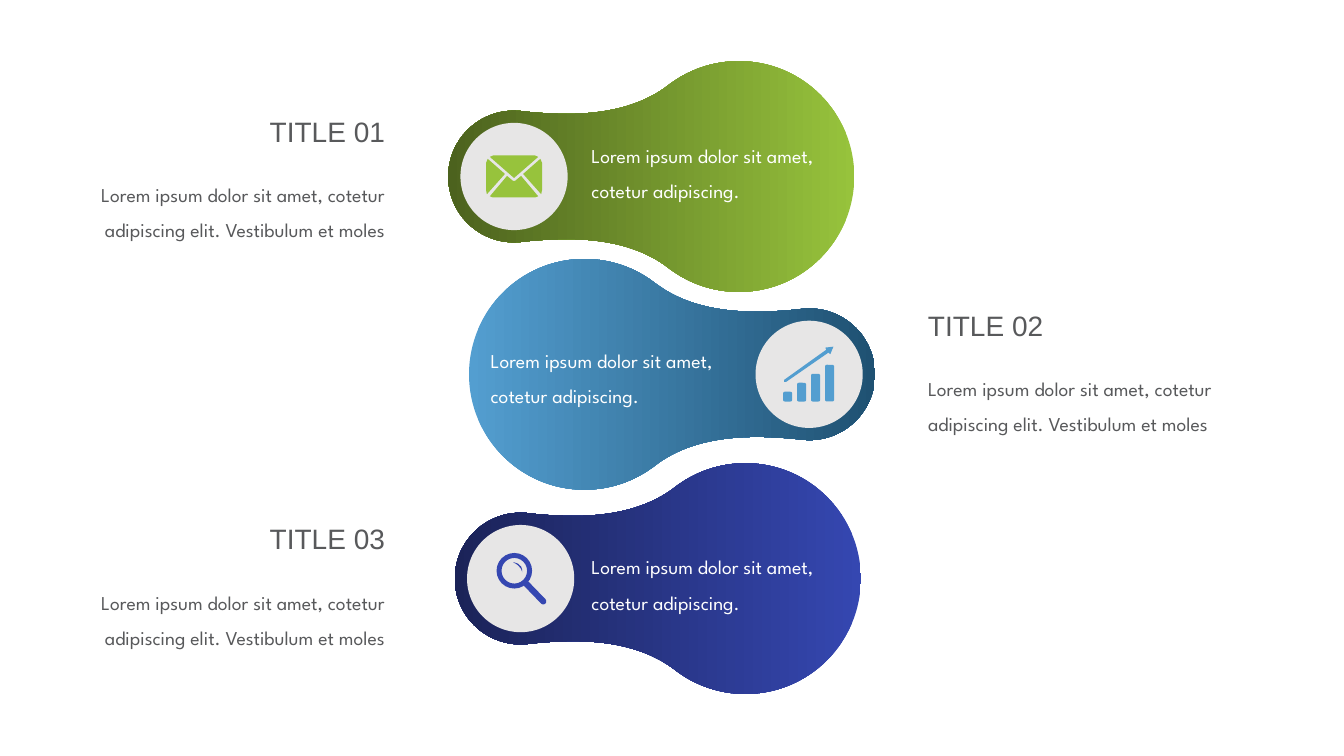
"""Build a slide of three gradient lobes with icons, captions and side texts."""
from dataclasses import dataclass
from typing import Callable

from lxml.etree import SubElement
from pptx import Presentation
from pptx.dml.color import RGBColor
from pptx.enum.shapes import MSO_SHAPE as Preset
from pptx.enum.text import MSO_ANCHOR as Anchor, PP_ALIGN as Align
from pptx.oxml.ns import qn
from pptx.shapes.autoshape import Shape
from pptx.shapes.shapetree import SlideShapes
from pptx.util import Pt

Point = tuple[float, float]

COLORS = {
    "green": "97C33C", "dark green": "4C621E",
    "blue": "539ED0", "dark blue": "1F5172",
    "indigo": "3547B1", "dark indigo": "1B2358",
    "disc": "E7E6E6", "white": "FFFFFF", "gray": "58595B",
}
CAPTION = "Lorem ipsum dolor sit amet, cotetur adipiscing."
DETAIL = "Lorem ipsum dolor sit amet, cotetur adipiscing elit. Vestibulum et moles"
BODY_FONT, TITLE_FONT = "League Spartan", "Arial"
TAIL_OFFSET, DISC_SIZE = 160.6, 76.6
CAPTION_WIDTH, TITLE_WIDTH, DETAIL_WIDTH = 194.4, 194.4, 246.2
DETAIL_DROP = 50.7
UPPER_LOBE = [
    (-82.4, 0), (-82.4, -45.5), (-45.5, -82.4), (0, -82.4),
    (19, -82.4), (36.4, -76), (50.4, -65.2),
    (81.4, -41.4), (124.6, -43.6), (152.6, -46.4),
    (155.2, -46.8), (157.9, -47), (160.6, -47),
    (186.6, -47), (207.6, -26), (207.6, 0),
]


@dataclass(frozen=True)
class Panel:
    title: str
    hue: str
    head: Point
    facing: int
    caption: Point
    title_top: float
    side_edge: float
    draw_icon: Callable[[SlideShapes, Point, str], None]


def color(name: str) -> RGBColor:
    return RGBColor.from_string(COLORS[name])


def clean(shape: Shape, fill: str) -> Shape:
    shape.shadow.inherit = False
    shape.line.fill.background()
    shape.fill.solid()
    shape.fill.fore_color.rgb = color(fill)
    return shape


def add_preset(shapes: SlideShapes, preset: Preset, center: Point,
               width: float, height: float, fill: str) -> Shape:
    x, y = center
    shape = shapes.add_shape(preset, Pt(x - width / 2), Pt(y - height / 2),
                             Pt(width), Pt(height))
    return clean(shape, fill)


def add_outline(shapes: SlideShapes, origin: Point, contours: list[list[Point]],
                fill: str) -> Shape:
    placed = [[(Pt(origin[0] + x), Pt(origin[1] + y)) for x, y in contour]
              for contour in contours]
    builder = shapes.build_freeform(*placed[0][0])
    builder.add_line_segments(placed[0][1:])
    for contour in placed[1:]:
        builder.move_to(*contour[0])
        builder.add_line_segments(contour[1:])
    return clean(builder.convert_to_shape(), fill)


def add_curve(shapes: SlideShapes, origin: Point, controls: list[Point],
              fill: str) -> Shape:
    shape = add_outline(shapes, origin, [controls], fill)
    segments = list(shape._element.iter(qn("a:lnTo")))
    outline = segments[0].getparent()
    for i in range(0, len(segments), 3):
        cubic = SubElement(outline, qn("a:cubicBezTo"))
        segments[i].addprevious(cubic)
        for segment in segments[i:i + 3]:
            cubic.append(segment[0])
            outline.remove(segment)
    return shape


def add_text(shapes: SlideShapes, text: str, left: float, top: float,
             width: float, height: float, *, size: float = 14,
             font: str = BODY_FONT, ink: str = "gray",
             align: Align = Align.LEFT) -> None:
    frame = shapes.add_textbox(Pt(left), Pt(top), Pt(width), Pt(height)).text_frame
    frame.word_wrap = True
    frame.vertical_anchor = Anchor.MIDDLE
    paragraph = frame.paragraphs[0]
    paragraph.alignment = align
    paragraph.line_spacing = 1.5
    run = paragraph.add_run()
    run.text = text
    run.font.size = Pt(size)
    run.font.name = font
    run.font.color.rgb = color(ink)


def mirror(points: list[Point]) -> list[Point]:
    return [(-x, y) for x, y in points]


def lobe_controls(facing: int) -> list[Point]:
    lower = [(x, -y) for x, y in reversed(UPPER_LOBE[:-1])]
    return [(facing * x, y) for x, y in UPPER_LOBE + lower]


def draw_envelope(shapes: SlideShapes, center: Point, hue: str) -> None:
    wing = [(6.5, -1.8), (18.8, -12.6), (20, -9.7), (20, 9.7), (19.4, 12.7)]
    flap = [(0, 1.1), (17.3, -14), (15, -15), (-15, -15), (-17.3, -14)]
    half_pocket = [(0.7, 3.2), (5, -0.4), (17.3, 14.2), (15, 15)]
    pocket = half_pocket + mirror(half_pocket)[::-1]
    add_outline(shapes, center, [wing, mirror(wing), flap, pocket], hue)


def draw_growth(shapes: SlideShapes, center: Point, hue: str) -> None:
    x, y = center
    for step in range(4):
        height = 7 + 6.4 * step
        bar = add_preset(shapes, Preset.ROUNDED_RECTANGLE,
                         (x - 15.4 + 10 * step, y + 19.4 - height / 2),
                         6.5, height, hue)
        bar.adjustments[0] = 0.2
    arrow = [(-18, 4), (12.2, -17.6), (11.5, -19.1), (17.3, -19.8),
             (15.1, -14.4), (13.7, -15.5), (-16.5, 5.4), (-18, 5.4)]
    add_outline(shapes, center, [arrow], hue)


def draw_magnifier(shapes: SlideShapes, center: Point, hue: str) -> None:
    x, y = center
    ring = add_preset(shapes, Preset.DONUT, (x - 4.5, y - 5.6), 25.4, 25.4, hue)
    ring.adjustments[0] = 0.14
    handle = add_preset(shapes, Preset.ROUNDED_RECTANGLE, (x + 10.1, y + 10),
                        21.8, 4.4, hue)
    handle.adjustments[0] = 0.5
    handle.rotation = 46
    start, end = (-5.4, -11.6), (1.1, -4.4)
    glint = [start, start, (1.8, -11.6), end, end, (1.1, -8.8), start]
    add_curve(shapes, center, glint, hue)


PANELS = [
    Panel("TITLE 01", "green", (527.8, 126.1), -1, (415.4, 95), 66.2, 282.2,
          draw_envelope),
    Panel("TITLE 02", "blue", (417.4, 267.4), 1, (343.4, 241.6), 204.8, 655.8,
          draw_growth),
    Panel("TITLE 03", "indigo", (532.5, 413.3), -1, (415.4, 389), 357.3, 282.2,
          draw_magnifier),
]


def draw_panel(shapes: SlideShapes, panel: Panel) -> None:
    lobe = add_curve(shapes, panel.head, lobe_controls(panel.facing), panel.hue)
    lobe.fill.gradient()
    lobe.fill.gradient_angle = 180 if panel.facing < 0 else 0
    for stop, name in zip(lobe.fill.gradient_stops, (panel.hue, f"dark {panel.hue}")):
        stop.color.rgb = color(name)

    disc = (panel.head[0] + panel.facing * TAIL_OFFSET, panel.head[1])
    add_preset(shapes, Preset.OVAL, disc, DISC_SIZE, DISC_SIZE, "disc")
    panel.draw_icon(shapes, disc, panel.hue)
    add_text(shapes, CAPTION, *panel.caption, CAPTION_WIDTH, 49, ink="white")

    on_left = panel.facing < 0
    align = Align.RIGHT if on_left else Align.LEFT
    add_text(shapes, panel.title, panel.side_edge - on_left * TITLE_WIDTH,
             panel.title_top, TITLE_WIDTH, 42.5, size=20, font=TITLE_FONT, align=align)
    add_text(shapes, DETAIL, panel.side_edge - on_left * DETAIL_WIDTH,
             panel.title_top + DETAIL_DROP, DETAIL_WIDTH, 61.2, align=align)


def main() -> None:
    deck = Presentation()
    deck.slide_width, deck.slide_height = Pt(960), Pt(540)
    slide = deck.slides.add_slide(deck.slide_layouts[6])
    for panel in PANELS:
        draw_panel(slide.shapes, panel)
    deck.save("out.pptx")


if __name__ == "__main__":
    main()
